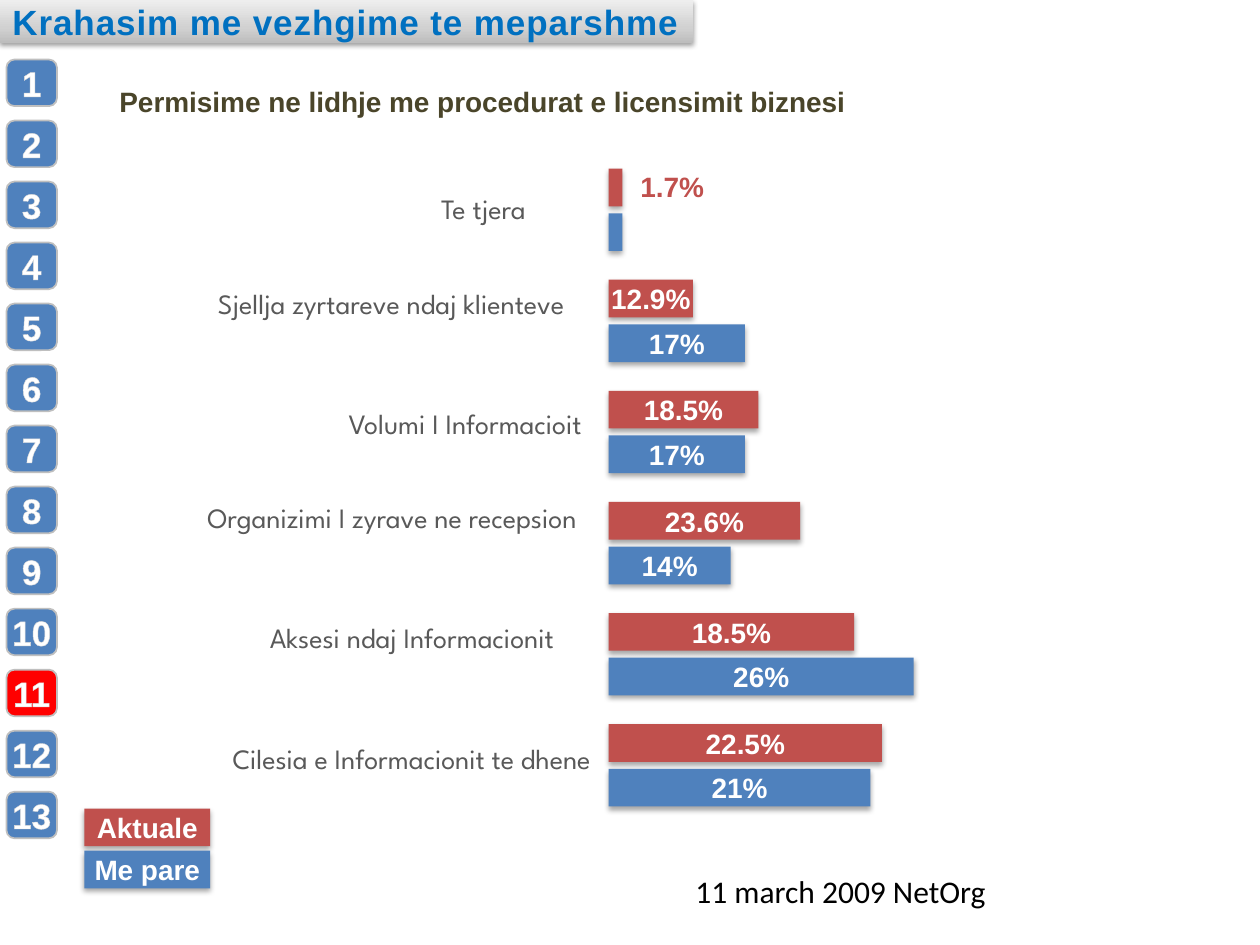
from lxml.etree import SubElement as Sub
from pptx import Presentation as Deck
from pptx.dml.color import RGBColor as Rgb
from pptx.enum.shapes import MSO_SHAPE as Geo
from pptx.enum.text import MSO_ANCHOR as Anchor, MSO_AUTO_SIZE as Fit, PP_ALIGN as Align
from pptx.oxml.ns import qn
from pptx.util import Cm, Pt

WHITE = Rgb(0xFF, 0xFF, 0xFF)
BLACK = Rgb(0x00, 0x00, 0x00)
BLUE = Rgb(0x4F, 0x81, 0xBD)
BRICK = Rgb(0xC0, 0x50, 0x4D)
RED = Rgb(0xFF, 0x00, 0x00)
AZURE = Rgb(0x00, 0x70, 0xC0)
OLIVE = Rgb(0x4A, 0x45, 0x2A)
GREY = Rgb(0x59, 0x59, 0x59)
SILVER = Rgb(0xBF, 0xBF, 0xBF)
PALE = Rgb(0xD9, 0xD9, 0xD9)
STEEL = [(0, Rgb(0xBD, 0xBD, 0xBD)), (35, Rgb(0xD1, 0xD1, 0xD1)),
         (100, Rgb(0xEE, 0xEE, 0xEE))]

# Label, its left, top and width, then (bar width, value) now and before
ROWS = [
    ("Te tjera", 7.04, 3.86, 3.56, (0.28, ""), (0.28, "")),
    ("Sjellja zyrtareve ndaj klienteve", 2.54, 5.77, 8.84, (1.7, "12.9%"), (2.75, "17%")),
    ("Volumi I Informacioit", 2.03, 8.18, 9.7, (3.02, "18.5%"), (2.75, "17%")),
    ("Organizimi I zyrave ne recepsion", 2.44, 10.08, 9.19, (3.86, "23.6%"), (2.46, "14%")),
    ("Aksesi ndaj Informacionit", 2.74, 12.5, 8.43, (4.95, "18.5%"), (6.15, "26%")),
    ("Cilesia e Informacionit te dhene", 1.27, 14.94, 10.64, (5.51, "22.5%"), (5.28, "21%")),
]
AXIS, TOP, PITCH, STEP = 12.27, 3.4, 2.24, 0.9
BAR = 0.76


class Page:
    """Style and current slide, with a method for each kind of element."""
    bold = dict(name="Arial", size=Pt(16), bold=True)
    big = dict(name="Arial", size=Pt(20), bold=True)
    plain = dict(name="League Spartan", size=Pt(16), bold=False)
    foot = dict(name="Calibri", size=Pt(18), bold=False)

    def __init__(self, slide):
        self.slide = slide

    def words(self, shape, text, look, color, align=Align.CENTER,
              inset=(0, 0, 0, 0), anchor=Anchor.MIDDLE, edge=None, gap=None):
        frame = shape.text_frame
        sides = dict(zip(("margin_left", "margin_top", "margin_right", "margin_bottom"),
                         map(Cm, inset)))
        sides.update(word_wrap=True, auto_size=Fit.NONE, vertical_anchor=anchor)
        for key, val in sides.items():
            setattr(frame, key, val)
        para = frame.paragraphs[0]
        para.alignment = align
        run = para.add_run()
        run.text = text
        for key, val in look.items():
            setattr(run.font, key, val)
        run.font.color.rgb = color
        props = run._r.get_or_add_rPr()
        if gap:
            props.set("spc", str(gap))
        if edge is not None:
            line = Sub(props, qn("a:ln"), w=str(Pt(0.75)))
            fill = Sub(line, qn("a:solidFill"))
            Sub(fill, qn("a:srgbClr"), val=str(edge))
            props.insert(0, line)

    def shade(self, shape, dist, alpha):
        shape.shadow.inherit = False
        effect = shape._element.spPr.find(qn("a:effectLst"))
        cast = Sub(effect, qn("a:outerShdw"), blurRad=str(Pt(3.1)), dist=str(Pt(dist)),
                   dir="5400000", rotWithShape="0")
        tint = Sub(cast, qn("a:srgbClr"), val="000000")
        Sub(tint, qn("a:alpha"), val=str(alpha * 1000))

    def title(self, text, *box):
        shape = self.slide.shapes.title
        for key, val in zip(("left", "top", "width", "height"), box):
            setattr(shape, key, Cm(val))
        grad = Sub(shape._element.spPr, qn("a:gradFill"), rotWithShape="1")
        stops = Sub(grad, qn("a:gsLst"))
        for pos, color in STEEL:
            stop = Sub(stops, qn("a:gs"), pos=str(pos * 1000))
            Sub(stop, qn("a:srgbClr"), val=str(color))
        Sub(grad, qn("a:lin"), ang="16200000", scaled="0")
        self.shade(shape, 1.6, 38)
        self.words(shape, text, self.big, AZURE, Align.LEFT, (0.25, 0, 0, 0), gap=50)

    def block(self, geo, fill, *box):
        shape = self.slide.shapes.add_shape(geo, *map(Cm, box))
        shape.shadow.inherit = False
        shape.fill.solid()
        shape.fill.fore_color.rgb = fill
        shape.line.fill.background()
        return shape

    def badge(self, num, top, fill):
        shape = self.block(Geo.ROUNDED_RECTANGLE, fill, 0.13, top, 1.02, 0.94)
        shape.adjustments[0] = 0.175
        shape.line.color.rgb = SILVER
        shape.line.width = Pt(1)
        self.words(shape, str(num), self.big, WHITE, edge=PALE)

    def bar(self, text, fill, left, top, width):
        shape = self.block(Geo.RECTANGLE, fill, left, top, width, BAR)
        self.shade(shape, 1.8, 35)
        if text:
            self.words(shape, text, self.bold, WHITE, inset=(0, 0.13, 0, 0.13))

    def label(self, text, box, *args, **opts):
        shape = self.slide.shapes.add_textbox(*map(Cm, box))
        self.words(shape, text, *args, **opts)


def main():
    deck = Deck()
    deck.slide_width, deck.slide_height = Cm(25.4), Cm(19.05)
    page = Page(deck.slides.add_slide(deck.slide_layouts[5]))

    # Headings and footer
    page.title("Krahasim me vezhgime te meparshme", 0, 0, 13.97, 0.86)
    page.label("Permisime ne lidhje me procedurat e licensimit biznesi",
               (2.11, 1.7, 15.24, 0.69), page.bold, OLIVE, anchor=Anchor.TOP)
    page.label("11 march 2009 NetOrg", (13.77, 17.45, 7.59, 1.02), page.foot, BLACK,
               Align.LEFT, (0.25, 0.13, 0.25, 0.13), Anchor.TOP, edge=AZURE)

    # Numbered side strip
    for num in range(1, 14):
        page.badge(num, 1.2 + 1.23 * (num - 1), RED if num == 11 else BLUE)

    # Row labels and paired bars
    for row, (text, left, top, width, *pair) in enumerate(ROWS):
        page.label(text, (left, top, width, 0.69), page.plain, GREY, Align.RIGHT)
        for part, ((size, value), fill) in enumerate(zip(pair, (BRICK, BLUE))):
            page.bar(value, fill, AXIS, TOP + PITCH * row + STEP * part, size)
    page.label("1.7%", (12.7, 3.28, 1.7, 0.94), page.bold, BRICK,
               inset=(0, 0.13, 0, 0.13))

    # Legend
    for part, (text, fill) in enumerate((("Aktuale", BRICK), ("Me pare", BLUE))):
        page.bar(text, fill, 1.7, 16.3 + 0.85 * part, 2.54)

    deck.save("out.pptx")


if __name__ == "__main__":
    main()
